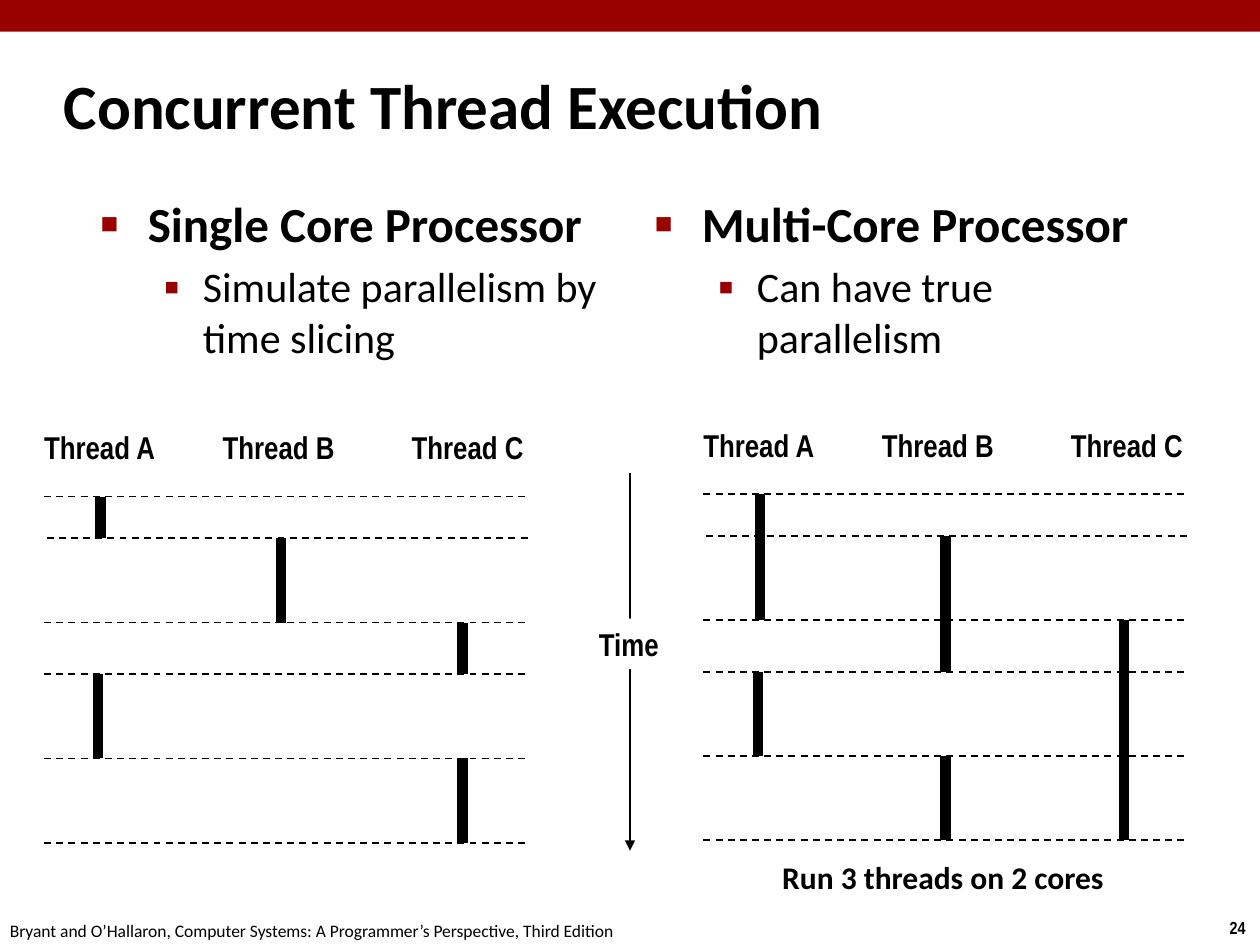
from lxml import etree
from pptx import Presentation
from pptx.dml.color import RGBColor as Rgb
from pptx.enum.dml import MSO_LINE as Dash
from pptx.enum.shapes import MSO_CONNECTOR as Link, MSO_SHAPE as Form
from pptx.enum.text import MSO_ANCHOR as Anchor, PP_ALIGN as Align
from pptx.oxml.ns import qn
from pptx.util import Cm, Pt

HUES = {"ink": "000000", "red": "990000", "paper": "FFFFFF"}
NARROW, SANS = "Arial Narrow", "Calibri"

# Diagram lengths in cm: time marks, thread labels, left diagram first
MARKS = [10.01, 10.85, 12.55, 13.59, 15.29, 16.99]
HEADS = [("Thread A", 0.64), ("Thread B", 4.24), ("Thread C", 8.05)]
# Each run of a thread: x, first mark, last mark
SINGLE = [(2.03, 0, 1), (5.66, 1, 2), (9.32, 2, 3), (1.98, 3, 4), (9.32, 4, 5)]
MULTI = [(2.03, 0, 2), (5.77, 1, 3), (9.37, 2, 5), (1.99, 3, 4), (5.77, 4, 5)]


def hue(name):
    return Rgb.from_string(HUES[name])


def add_text(slide, text, box, size=18, font=NARROW, bold=True, wrap=False,
             align=Align.LEFT, anchor=Anchor.TOP, hang=0, fill=None):
    shape = slide.shapes.add_textbox(*map(Cm, box))
    if fill:
        shape.fill.solid()
        shape.fill.fore_color.rgb = hue(fill)
    frame = shape.text_frame
    frame.word_wrap = wrap
    frame.vertical_anchor = anchor
    para = frame.paragraphs[0]
    para.alignment = align
    if hang:
        indent(para, hang, hang)
    add_run(para, text, size, font, bold)
    return frame


def add_run(para, text, size, font, bold):
    run = para.add_run()
    run.text = text
    run.font.name = font
    run.font.size = Pt(size)
    run.font.bold = bold
    run.font.color.rgb = hue("ink")


def indent(para, left, hang):
    props = para._p.get_or_add_pPr()
    props.set("marL", str(Cm(left)))
    props.set("indent", str(-Cm(hang)))
    return props


def add_mark(para, char, scale, left, hang, size):
    """Give a paragraph a red bullet and a gap of a fifth of its size."""
    para.space_before = Pt(size * 0.2)
    props = indent(para, left, hang)
    tint = etree.SubElement(props, qn("a:buClr"))
    etree.SubElement(tint, qn("a:srgbClr"), val=HUES["red"])
    etree.SubElement(props, qn("a:buSzPct"), val=str(scale * 1000))
    etree.SubElement(props, qn("a:buFont"), typeface="Arial")
    etree.SubElement(props, qn("a:buChar"), char=char)


def add_list(slide, x, head, point):
    frame = add_text(slide, head, (x, 3.78, 10.74, 13.82), size=28,
                     font=SANS, wrap=True)
    add_mark(frame.paragraphs[0], "■", 60, 0.95, 0.95, 28)
    para = frame.add_paragraph()
    para.level = 1
    add_run(para, point, 24, SANS, False)
    add_mark(para, "▪", 110, 2.06, 0.79, 24)


def add_line(slide, ends, width=1, dash=None, arrow=False):
    link = slide.shapes.add_connector(Link.STRAIGHT, *map(Cm, ends))
    link.line.color.rgb = hue("ink")
    link.line.width = Pt(width)
    if dash:
        link.line.dash_style = dash
    if arrow:
        etree.SubElement(link.line._get_or_add_ln(), qn("a:tailEnd"),
                         type="triangle")
    etree.SubElement(link._element.spPr, qn("a:effectLst"))


def add_chart(slide, runs, dx=0, dy=0):
    """Draw thread labels, dashed time marks and the bars between them."""
    for name, x in HEADS:
        add_text(slide, name, (x + dx, 8.51 + dy, 2.79, 1.02))
    rows = [y + dy for y in MARKS]
    for x, start, end in runs:
        add_line(slide, (x + dx, rows[start], x + dx, rows[end]), width=6)
    for i, y in enumerate(rows):
        x = dx + (0.94 if i == 1 else 0.89)
        add_line(slide, (x, y, x + 9.7, y), dash=Dash.DASH)


def add_frame(slide):
    bar = slide.shapes.add_shape(Form.RECTANGLE, 0, 0, Cm(25.4), Cm(0.64))
    bar.shadow.inherit = False
    bar.fill.solid()
    bar.fill.fore_color.rgb = hue("red")
    bar.line.fill.background()
    add_text(slide, "24", (24.54, 18.36, 0.86, 0.69), size=10)
    add_text(slide, "Bryant and O’Hallaron, Computer Systems: "
             "A Programmer’s Perspective, Third Edition",
             (-0.05, 18.42, 12.9, 0.69), size=10, font=SANS, bold=False)


def main():
    deck = Presentation()
    deck.slide_width, deck.slide_height = Cm(25.4), Cm(19.05)
    slide = deck.slides.add_slide(deck.slide_layouts[6])

    # Bar, footer and title
    add_frame(slide)
    add_text(slide, "Concurrent Thread Execution", (1.04, 1.04, 21.08, 2.11),
             size=36, font=SANS, wrap=True, anchor=Anchor.MIDDLE, hang=0.33)

    # Two lists
    add_list(slide, 1.78, "Single Core Processor",
             "Simulate parallelism by time slicing")
    add_list(slide, 12.95, "Multi-Core Processor",
             "Can have true parallelism")

    # Time axis
    add_line(slide, (12.7, 9.53, 12.7, 17.15), arrow=True)
    add_text(slide, "Time", (11.81, 12.47, 1.73, 1.02),
             align=Align.CENTER, fill="paper")

    # Two diagrams
    add_chart(slide, SINGLE)
    add_chart(slide, MULTI, dx=13.29, dy=-0.05)
    add_text(slide, "Run 3 threads on 2 cores", (15.52, 17.17, 7.06, 1.02),
             font=SANS)

    deck.save("out.pptx")


if __name__ == "__main__":
    main()
